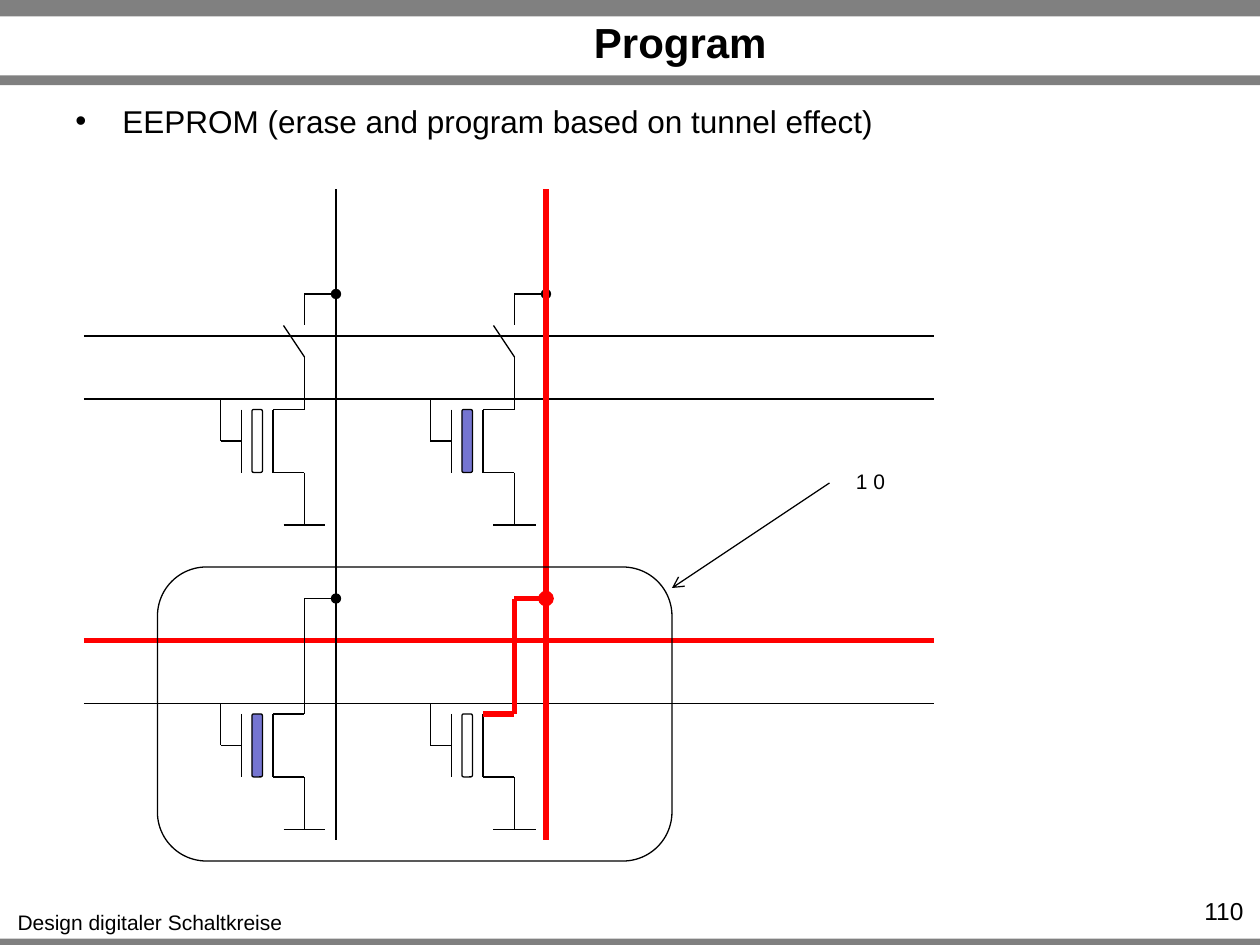
from pptx import Presentation
from pptx.dml.color import RGBColor
from pptx.enum.shapes import MSO_CONNECTOR as CONN, MSO_SHAPE as SHAPE
from pptx.enum.text import MSO_ANCHOR as ANCHOR, MSO_AUTO_SIZE as AUTO, PP_ALIGN as ALIGN
from pptx.oxml.ns import qn
from pptx.util import Cm, Pt
from lxml.etree import SubElement

COLORS = {"black": "000000", "red": "FF0000", "charge": "7575D1", "bar": "808080"}
GRID = 2.54 / 12
THIN, BOLD = 0.75, 3
COLUMNS = (29, 49)
ROWS = (28, 57)


class Deck:
    """Holds the drawing style and the current slide of the memory array."""

    def __init__(self, prs):
        self.font = "Arial"
        self.s = prs.slides.add_slide(prs.slide_layouts[5])

    def color(self, name):
        return RGBColor.from_string(COLORS[name])

    def fill_text(self, tf, text, size, align, bold=False, wrap=True, anchor=ANCHOR.TOP, auto=AUTO.NONE):
        frame = {"word_wrap": wrap, "vertical_anchor": anchor, "auto_size": auto,
                 "margin_left": Cm(0.25), "margin_right": Cm(0.25),
                 "margin_top": Cm(0.13), "margin_bottom": Cm(0.13)}
        for key, value in frame.items():
            setattr(tf, key, value)
        p = tf.paragraphs[0]
        p.alignment = align
        r = p.add_run()
        r.text = text
        for key, value in {"name": self.font, "size": Pt(size), "bold": bold}.items():
            setattr(r.font, key, value)
        r.font.color.rgb = self.color("black")
        return p

    def title(self, text, left, top, width, height):
        sp = self.s.shapes.title
        box = {"left": left, "top": top, "width": width, "height": height}
        for key, value in box.items():
            setattr(sp, key, Cm(value))
        self.fill_text(sp.text_frame, text, 24, ALIGN.CENTER, bold=True, anchor=ANCHOR.MIDDLE)

    def text(self, text, box, size, align=ALIGN.LEFT, **options):
        sp = self.s.shapes.add_textbox(*map(Cm, box))
        return self.fill_text(sp.text_frame, text, size, align, **options)

    def bullet(self, text, box, size):
        p = self.text(text, box, size)
        pPr = p._p.get_or_add_pPr()
        pPr.set("marL", str(Cm(0.95)))
        pPr.set("indent", str(Cm(-0.95)))
        SubElement(pPr, qn("a:buFont"), typeface=self.font)
        SubElement(pPr, qn("a:buChar"), char="•")

    def shape(self, kind, box, fill=None, line=None):
        sp = self.s.shapes.add_shape(kind, *map(Cm, box))
        sp.shadow.inherit = False
        if fill:
            sp.fill.solid()
            sp.fill.fore_color.rgb = self.color(fill)
        else:
            sp.fill.background()
        if line:
            sp.line.color.rgb = self.color(line)
            sp.line.width = Pt(THIN)
        else:
            sp.line.fill.background()

    def rounded(self, box, fill=None):
        self.shape(SHAPE.ROUNDED_RECTANGLE, [n * GRID for n in box], fill, "black")

    def line(self, x1, y1, x2, y2, color="black", width=THIN, tail=None):
        ends = [Cm(n * GRID) for n in (x1, y1, x2, y2)]
        cn = self.s.shapes.add_connector(CONN.STRAIGHT, *ends)
        cn.line.color.rgb = self.color(color)
        cn.line.width = Pt(width)
        spPr = cn._element.spPr
        if tail:
            SubElement(spPr.find(qn("a:ln")), qn("a:tailEnd"), type=tail)
        SubElement(spPr, qn("a:effectLst"))

    def cell(self, x, y, charged, switch, color="black", width=THIN):
        drain = [(0, 0, 0, 3), (0, 6, 0, 11)] if switch else [(0, 0, 0, 11)]
        live = drain + [(-3, 11, 0, 11)]
        plain = [(-3, 11, -3, 17), (-3, 17, 0, 17), (0, 17, 0, 22), (-2, 22, 2, 22),
                 (-6, 11, -6, 17), (-6, 14, -8, 14), (-8, 14, -8, 10)]
        if switch:
            plain.append((0, 6, -2, 3))
        for x1, y1, x2, y2 in plain:
            self.line(x + x1, y + y1, x + x2, y + y2)
        for x1, y1, x2, y2 in live:
            self.line(x + x1, y + y1, x + x2, y + y2, color, width)
        self.line(x, y, x + 3, y, color, width, "oval")
        self.rounded((x - 5, y + 11, 1, 6), "charge" if charged else None)


def main():
    prs = Presentation()
    prs.slide_width, prs.slide_height = Cm(25.4), Cm(19.05)
    deck = Deck(prs)

    for top, height in ((18.92, 0.2), (0, 0.33), (1.52, 0.2)):
        deck.shape(SHAPE.RECTANGLE, (0, top, 25.4, height), "bar")
    deck.title("Program", 3.3, 0.36, 20.83, 0.97)
    deck.bullet("EEPROM (erase and program based on tunnel effect)", (1.27, 1.93, 22.86, 1.68), 18)
    deck.text("Design digitaler Schaltkreise", (0.08, 18.21, 5.89, 0.76), 12, ALIGN.CENTER,
              wrap=False, auto=AUTO.SHAPE_TO_FIT_TEXT)
    deck.text("110", (23.11, 17.93, 2.21, 0.61), 14, ALIGN.RIGHT)

    left, right = COLUMNS
    upper, lower = ROWS
    for row, color, width in ((upper, "black", THIN), (lower, "red", BOLD)):
        deck.line(8, row + 4, 89, row + 4, color, width)
        deck.line(8, row + 10, 89, row + 10)
    deck.cell(right, upper, charged=True, switch=True)
    deck.line(right + 3, 18, right + 3, 80, "red", BOLD)
    deck.cell(left, upper, charged=False, switch=True)
    deck.cell(left, lower, charged=True, switch=False)
    deck.cell(right, lower, charged=False, switch=False, color="red", width=BOLD)
    deck.line(left + 3, 18, left + 3, 80)

    deck.rounded((15, 54, 49, 28))
    deck.line(79, 46, 64, 56, tail="arrow")
    deck.text("1 0", (16.99, 9.32, 1.12, 0.76), 12, ALIGN.CENTER,
              wrap=False, auto=AUTO.SHAPE_TO_FIT_TEXT)

    prs.save("out.pptx")


if __name__ == "__main__":
    main()
